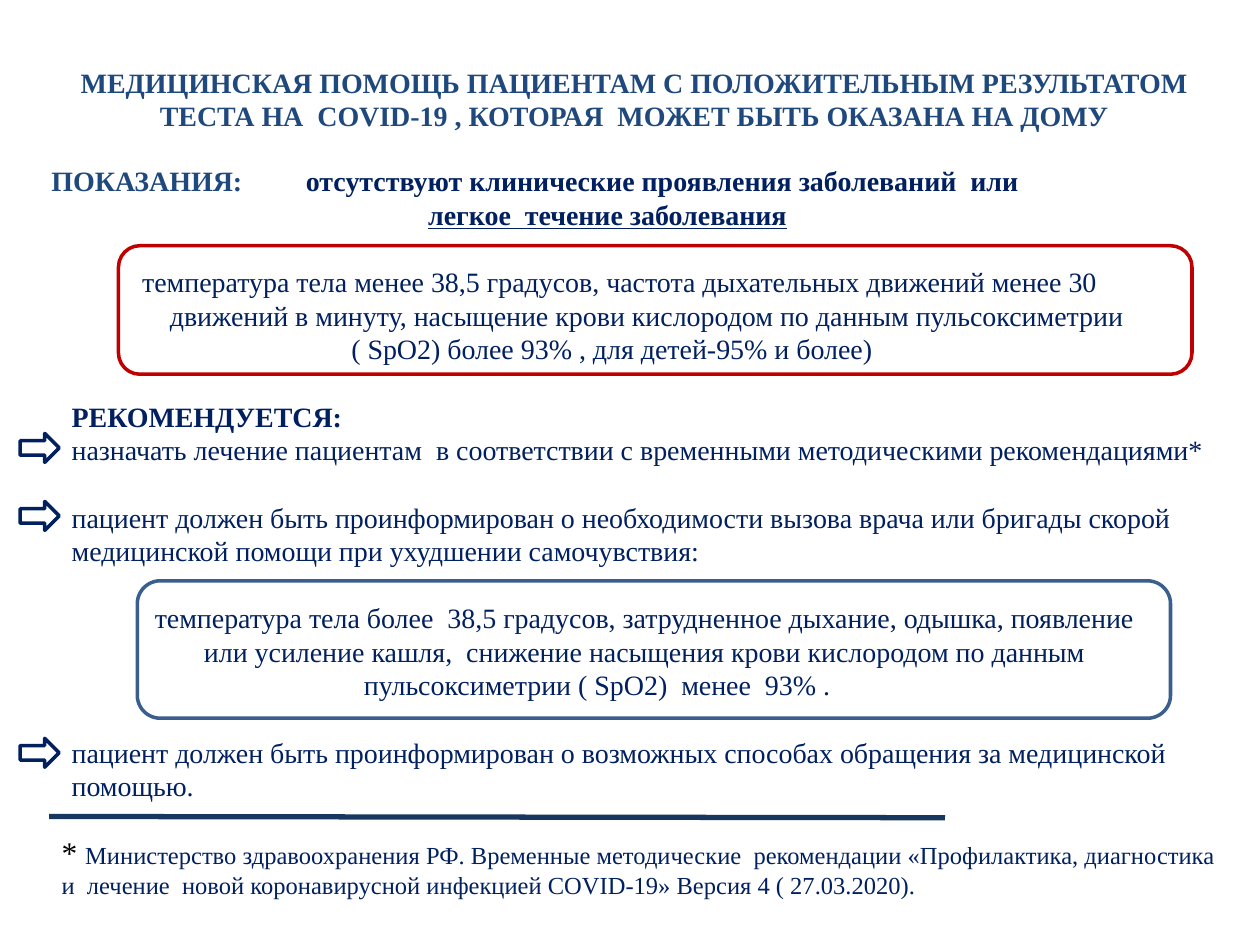
from typing import NamedTuple

from lxml.etree import SubElement
from pptx import Presentation
from pptx.dml.color import RGBColor
from pptx.enum.shapes import MSO_CONNECTOR, MSO_SHAPE
from pptx.enum.text import PP_ALIGN
from pptx.oxml.ns import qn
from pptx.util import Inches, Pt

FONT = "Times New Roman"
BLUE = RGBColor(0x1F, 0x49, 0x7D)
NAVY = RGBColor(0x00, 0x20, 0x60)
BLACK = RGBColor(0x00, 0x00, 0x00)
RED = RGBColor(0xC0, 0x00, 0x00)
STEEL = RGBColor(0x3A, 0x5F, 0x8C)
RULE = RGBColor(0x17, 0x37, 0x5E)
GAP = 19.2  # one line of 16 pt text, in points


class Run(NamedTuple):
    text: str
    color: RGBColor = NAVY
    size: float = 16
    bold: bool = False
    underline: bool = False


class Para(NamedTuple):
    runs: list[Run]
    indent: float = 0
    before: float = 0
    tab: float = 0
    align: PP_ALIGN = PP_ALIGN.LEFT


class TextBlock(NamedTuple):
    left: float
    top: float
    width: float
    height: float
    paras: list[Para]


class Outline(NamedTuple):
    kind: MSO_SHAPE
    left: float
    top: float
    width: float
    height: float
    color: RGBColor


def line(text: str, indent: float = 0, before: float = 0) -> Para:
    return Para([Run(text)], indent, before)


def title_line(text: str) -> Para:
    return Para([Run(text, BLUE, bold=True)], align=PP_ALIGN.CENTER)


TEXTS = [
    TextBlock(0.48, 0.47, 9.11, 0.64, [
        title_line("МЕДИЦИНСКАЯ ПОМОЩЬ ПАЦИЕНТАМ С ПОЛОЖИТЕЛЬНЫМ РЕЗУЛЬТАТОМ"),
        title_line("ТЕСТА НА  COVID-19 , КОТОРАЯ  МОЖЕТ БЫТЬ ОКАЗАНА НА ДОМУ"),
    ]),
    TextBlock(0.31, 1.25, 9.14, 2.02, [
        Para([Run("ПОКАЗАНИЯ:\t", BLUE, bold=True),
              Run("отсутствуют клинические проявления заболеваний  или", bold=True)],
             tab=2.02),
        Para([Run("легкое  течение заболевания", bold=True, underline=True)], 2.99),
        line("температура тела менее 38,5 градусов, частота дыхательных движений менее 30",
             0.72, GAP),
        line("движений в минуту, насыщение крови кислородом по данным пульсоксиметрии", 0.94),
        line("( SpO2) более 93% , для детей-95% и более)", 2.38),
    ]),
    TextBlock(0.47, 3.12, 9.31, 3.64, [
        Para([Run("РЕКОМЕНДУЕТСЯ:", bold=True)]),
        line("назначать лечение пациентам  в соответствии с временными методическими рекомендациями*"),
        line("пациент должен быть проинформирован о необходимости вызова врача или бригады скорой",
             before=GAP),
        line("медицинской помощи при ухудшении самочувствия:"),
        line("температура тела более  38,5 градусов, затрудненное дыхание, одышка, появление",
             0.66, GAP),
        line("или усиление кашля,  снижение насыщения крови кислородом по данным", 1.05),
        line("пульсоксиметрии ( SpO2)  менее  93% .", 2.32),
        line("пациент должен быть проинформирован о возможных способах обращения за медицинской",
             before=GAP),
        line("помощью."),
    ]),
    TextBlock(0.39, 6.56, 9.49, 0.94, [
        Para([Run("* ", BLACK, 18),
              Run("Министерство здравоохранения РФ. Временные методические  рекомендации "
                  "«Профилактика, диагностика", size=14)]),
        Para([Run("и  лечение  новой коронавирусной инфекцией COVID-19» Версия 4 ( 27.03.2020).",
                  size=14)]),
    ]),
]

OUTLINES = [
    Outline(MSO_SHAPE.ROUNDED_RECTANGLE, 0.94, 1.95, 8.52, 1.02, RED),
    Outline(MSO_SHAPE.ROUNDED_RECTANGLE, 1.09, 4.61, 8.2, 1.09, STEEL),
    *(Outline(MSO_SHAPE.RIGHT_ARROW, 0.16, top, 0.31, 0.23, NAVY)
      for top in (3.44, 3.98, 5.86)),
]


def add_text(s, block: TextBlock) -> None:
    tf = s.shapes.add_textbox(*map(Inches, block[:4])).text_frame
    tf.word_wrap = True
    for i, para in enumerate(block.paras):
        p = tf.add_paragraph() if i else tf.paragraphs[0]
        p.alignment = para.align
        if para.before:
            p.space_before = Pt(para.before)
        pPr = p._p.get_or_add_pPr()
        if para.indent:
            pPr.set("marL", str(Inches(para.indent)))
        if para.tab:
            tabs = SubElement(pPr, qn("a:tabLst"))
            SubElement(tabs, qn("a:tab"), pos=str(Inches(para.tab)), algn="l")
        for run in para.runs:
            r = p.add_run()
            r.text = run.text
            r.font.name = FONT
            r.font.size = Pt(run.size)
            r.font.bold = run.bold
            r.font.underline = run.underline
            r.font.color.rgb = run.color


def add_outline(s, outline: Outline) -> None:
    sp = s.shapes.add_shape(outline.kind, *map(Inches, outline[1:5]))
    sp.shadow.inherit = False
    sp.fill.background()
    sp.line.color.rgb = outline.color
    sp.line.width = Pt(2)


def add_footnote_rule(s) -> None:
    rule = s.shapes.add_connector(
        MSO_CONNECTOR.STRAIGHT, Inches(0.39), Inches(6.48), Inches(7.5), Inches(6.49))
    rule.line.color.rgb = RULE
    rule.line.width = Pt(3)
    SubElement(rule._element.spPr, qn("a:effectLst"))


def main() -> None:
    prs = Presentation()
    prs.slide_width, prs.slide_height = Inches(10), Inches(7.5)
    s = prs.slides.add_slide(prs.slide_layouts[6])
    for block in TEXTS:
        add_text(s, block)
    for outline in OUTLINES:
        add_outline(s, outline)
    add_footnote_rule(s)
    prs.save("out.pptx")


if __name__ == "__main__":
    main()
